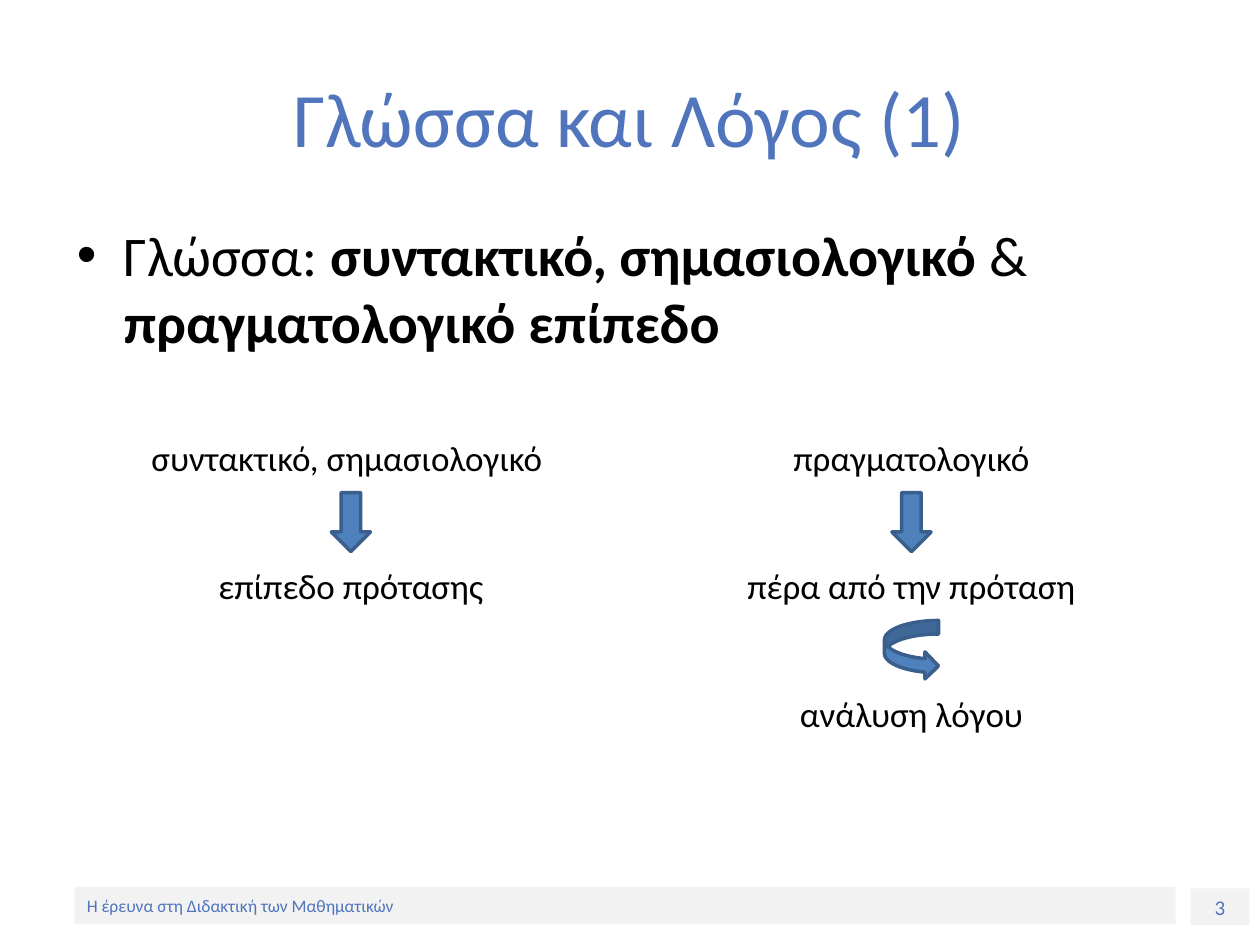
from dataclasses import dataclass

import lxml.etree
import pptx
import pptx.dml.color
import pptx.enum.shapes
import pptx.enum.text
import pptx.oxml.ns
import pptx.shapes.autoshape
import pptx.slide
import pptx.util

Cm = pptx.util.Cm
Pt = pptx.util.Pt
Preset = pptx.enum.shapes.MSO_SHAPE
Align = pptx.enum.text.PP_ALIGN
Anchor = pptx.enum.text.MSO_ANCHOR


@dataclass(frozen=True)
class Theme:
    font: str = "Calibri"
    accent: str = "5075BC"
    text: str = "000000"
    band: str = "F2F2F2"
    arrow_fill: str = "4F81BD"
    arrow_line: str = "3A5F8C"
    title_size: int = 44
    body_size: int = 32
    label_size: int = 20
    number_size: int = 12
    footer_size: int = 10


@dataclass(frozen=True)
class Area:
    """A rectangle in centimetres."""
    left: float
    top: float
    width: float
    height: float

    def lengths(self) -> tuple:
        return Cm(self.left), Cm(self.top), Cm(self.width), Cm(self.height)


@dataclass(frozen=True)
class Arrow:
    preset: Preset
    width: float


@dataclass(frozen=True)
class Column:
    """Labels from top to bottom, with an arrow between each pair."""
    left: float
    labels: tuple[str, ...]
    arrows: tuple[Arrow, ...]


THEME = Theme()
LABEL_WIDTH, LABEL_HEIGHT = 8.61, 1.4
ARROW_HEIGHT = 1.19
COLUMN_TOP = 8.53
LABEL_STEP = 2.58
DOWN = Arrow(Preset.DOWN_ARROW, 0.79)
CURVED = Arrow(Preset.CURVED_RIGHT_ARROW, 1.09)
COLUMNS = (
    Column(2.77, ("συντακτικό, σημασιολογικό ", "επίπεδο πρότασης"), (DOWN,)),
    Column(14.07, ("πραγματολογικό", "πέρα από την πρόταση", "ανάλυση λόγου"),
           (DOWN, CURVED)),
)


def color(code: str) -> pptx.dml.color.RGBColor:
    return pptx.dml.color.RGBColor.from_string(code)


def add_filled(page: pptx.slide.Slide, preset: Preset, area: Area, fill: str,
               line: str | None = None) -> pptx.shapes.autoshape.Shape:
    shape = page.shapes.add_shape(preset, *area.lengths())
    shape.shadow.inherit = False
    shape.fill.solid()
    shape.fill.fore_color.rgb = color(fill)
    if line:
        shape.line.color.rgb = color(line)
        shape.line.width = Pt(2)
    else:
        shape.line.fill.background()
    return shape


def write(box: pptx.shapes.autoshape.Shape, *spans: tuple[str, bool], size: int,
          ink: str = THEME.text, align: Align = Align.CENTER,
          anchor: Anchor = Anchor.MIDDLE, bullet: bool = False) -> None:
    """Fill the box with one paragraph of (text, bold) spans."""
    frame = box.text_frame
    frame.word_wrap = True
    frame.vertical_anchor = anchor
    para = frame.paragraphs[0]
    para.alignment = align
    if bullet:
        properties = para._p.get_or_add_pPr()
        properties.set("marL", str(Cm(0.95)))
        properties.set("indent", str(-Cm(0.95)))
        qualified = pptx.oxml.ns.qn
        lxml.etree.SubElement(properties, qualified("a:buFont"), typeface="Arial")
        lxml.etree.SubElement(properties, qualified("a:buChar"), char="•")
    for text, bold in spans:
        span = para.add_run()
        span.text = text
        span.font.name = THEME.font
        span.font.size = Pt(size)
        span.font.bold = bold
        span.font.color.rgb = color(ink)


def add_text(page: pptx.slide.Slide, area: Area, *spans: tuple[str, bool],
             **text_format) -> None:
    write(page.shapes.add_textbox(*area.lengths()), *spans, **text_format)


def add_band(page: pptx.slide.Slide, area: Area, text: str, **text_format) -> None:
    band = add_filled(page, Preset.RECTANGLE, area, THEME.band)
    write(band, (text, False), ink=THEME.accent, **text_format)


def add_column(page: pptx.slide.Slide, column: Column) -> None:
    for row, label in enumerate(column.labels):
        area = Area(column.left, COLUMN_TOP + row * LABEL_STEP, LABEL_WIDTH, LABEL_HEIGHT)
        add_text(page, area, (label, False), size=THEME.label_size)
    for row, arrow in enumerate(column.arrows):
        area = Area(column.left + (LABEL_WIDTH - arrow.width) / 2,
                    COLUMN_TOP + row * LABEL_STEP + LABEL_HEIGHT,
                    arrow.width, ARROW_HEIGHT)
        add_filled(page, arrow.preset, area, THEME.arrow_fill, THEME.arrow_line)


def main() -> None:
    deck = pptx.Presentation()
    deck.slide_width, deck.slide_height = Cm(25.4), Cm(19.05)
    page = deck.slides.add_slide(deck.slide_layouts[6])

    add_band(page, Area(24, 17.91, 1.19, 0.74), "3",
             size=THEME.number_size, anchor=Anchor.TOP)
    add_band(page, Area(1.5, 17.88, 22.2, 0.74), "Η έρευνα στη Διδακτική των Μαθηματικών",
             size=THEME.footer_size, align=Align.LEFT)
    add_text(page, Area(1.27, 0.76, 22.86, 3.18), ("Γλώσσα και Λόγος (1)", False),
             size=THEME.title_size, ink=THEME.accent)
    add_text(page, Area(1.3, 4.32, 22.86, 3),
             ("Γλώσσα: ", False), ("συντακτικό, σημασιολογικό ", True),
             ("& ", False), ("πραγματολογικό επίπεδο", True),
             size=THEME.body_size, align=Align.LEFT, anchor=Anchor.TOP, bullet=True)
    for column in COLUMNS:
        add_column(page, column)

    deck.save("out.pptx")


if __name__ == "__main__":
    main()
